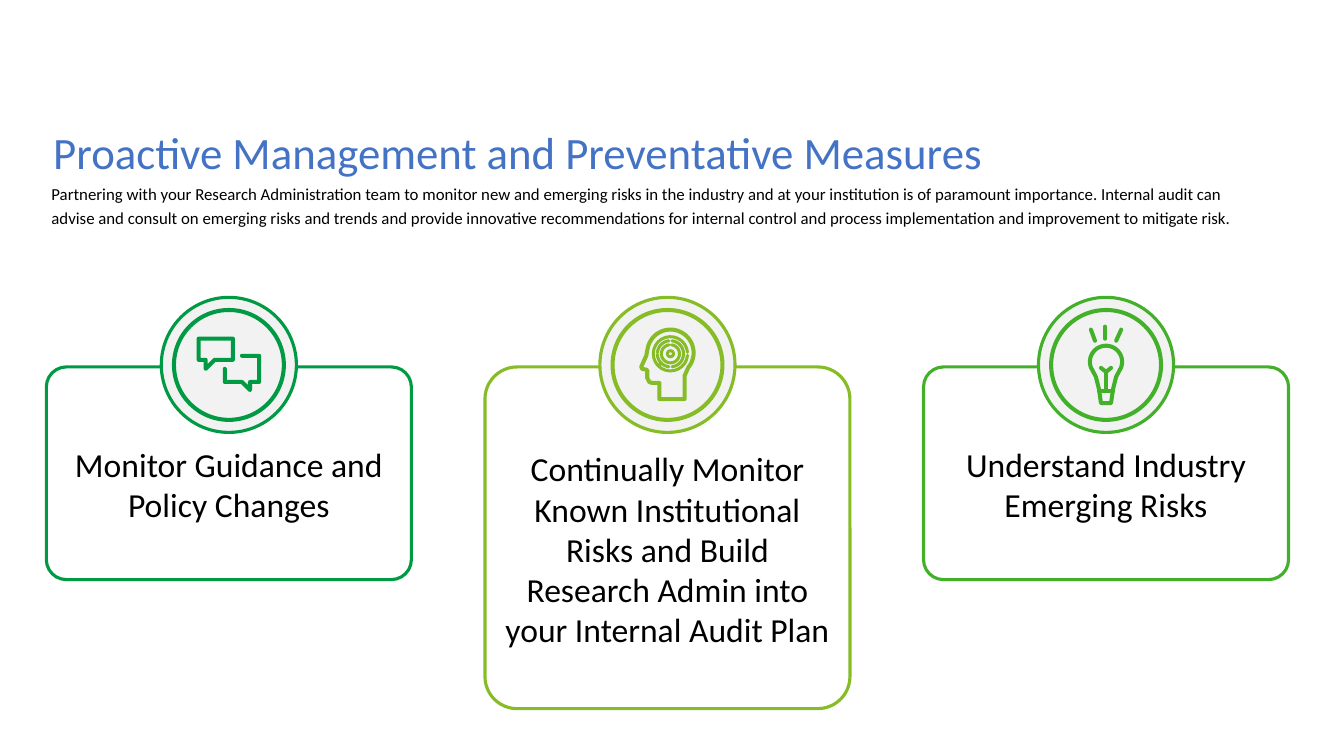
from dataclasses import dataclass
from math import cos, radians, sin

from pptx import Presentation
from pptx import util as u
from pptx.dml.color import RGBColor
from pptx.enum import shapes, text
from pptx.oxml.ns import qn

PX = 9144
HUES = {
    "blue": "4472C4", "black": "000000", "white": "FFFFFF", "gray": "F2F2F2",
    "dark": "009A44", "lime": "86BC25", "leaf": "43B02A",
}
Point = tuple[float, float]


@dataclass(frozen=True)
class Stroke:
    points: list[Point]
    closed: bool = False
    width: int = 4


@dataclass(frozen=True)
class Label:
    words: str
    box: tuple[int, int, int, int]
    size: int
    hue: str
    frame: dict
    para: dict


@dataclass(frozen=True)
class Card:
    words: str
    hue: str
    tall: int
    icon: list[Stroke]


def px(*vals: float) -> list[int]:
    return [u.Emu(round(val * PX)) for val in vals]


def color(hue: str) -> RGBColor:
    return RGBColor.from_string(HUES[hue])


def arc(x: int, y: int, r: int, start: int, end: int) -> list[Point]:
    steps = 24
    turns = [radians(start + (end - start) * i / steps) for i in range(steps + 1)]
    return [(x + r * cos(a), y + r * sin(a)) for a in turns]


def apply(item, looks: dict) -> None:
    for key, val in looks.items():
        setattr(item, key, val)


def ink(shape, hue: str, width: int) -> None:
    shape.shadow.inherit = False
    shape.line.color.rgb = color(hue)
    shape.line.width = width


def add_form(slide, kind, box: tuple, fill: str | None, hue: str, width: int):
    form = slide.shapes.add_shape(kind, *px(*box))
    ink(form, hue, width)
    if fill:
        form.fill.solid()
        form.fill.fore_color.rgb = color(fill)
    else:
        form.fill.background()
    return form


def add_stroke(slide, stroke: Stroke, hue: str) -> None:
    dots = [tuple(px(*dot)) for dot in stroke.points]
    build = slide.shapes.build_freeform(*dots[0], scale=1.0)
    build.add_line_segments(dots[1:], close=stroke.closed)
    form = build.convert_to_shape()
    form.fill.background()
    ink(form, hue, px(stroke.width)[0])
    form.element.spPr.find(qn("a:ln")).set("cap", "rnd")


def add_label(slide, label: Label) -> None:
    frame = slide.shapes.add_textbox(*px(*label.box)).text_frame
    apply(frame, {"word_wrap": True, **label.frame})
    para = frame.paragraphs[0]
    para.text = label.words
    apply(para, label.para)
    font = para.runs[0].font
    apply(font, {"name": "Calibri", "size": u.Pt(label.size)})
    font.color.rgb = color(label.hue)


def inset(side: int, top: int) -> dict:
    wide, high = px(side, top)
    return {"margin_left": wide, "margin_right": wide,
            "margin_top": high, "margin_bottom": high}


def add_card(slide, card: Card, left: int) -> None:
    line = u.Pt(2.25)
    mid = left + 181
    panel = add_form(slide, shapes.MSO_SHAPE.ROUNDED_RECTANGLE,
                     (left, 364, 362, card.tall), "white", card.hue, line)
    panel.adjustments[0] = 0.094
    look = {**inset(0, 0), "vertical_anchor": text.MSO_ANCHOR.MIDDLE}
    add_label(slide, Label(card.words, (left + 19, 440, 324, card.tall - 130), 24,
                           "black", look, {"alignment": text.PP_ALIGN.CENTER}))
    for span, fill, width in ((134, "gray", line), (109, None, px(4)[0])):
        box = (mid - span / 2, 362 - span / 2, span, span)
        add_form(slide, shapes.MSO_SHAPE.OVAL, box, fill, card.hue, width)
    for stroke in card.icon:
        add_stroke(slide, stroke, card.hue)


CHAT = [
    Stroke([(197, 336), (231, 336), (231, 357), (213, 357), (204, 366),
            (204, 357), (197, 357)], True),
    Stroke([(240, 353), (257, 353), (257, 379), (248, 379), (248, 387),
            (240, 379), (223, 379), (223, 366)]),
]
MAZE = ((17, 5, 355), (13, 97, 178), (13, 185, 263), (13, -83, 83),
        (9, -82, 262), (3, 0, 360))
HEAD = [
    Stroke([(654, 396), (679, 396), (679, 373), *arc(665, 350, 23, 40, -170),
            (641, 353), (636, 364), (637, 366), (642, 367), (642, 375),
            (644, 379), (647, 380), (654, 380)], True),
    *[Stroke(arc(665, 351, *ring), width=3) for ring in MAZE],
    Stroke([(653, 363), (656, 360)], width=3),
]
BULB = [
    Stroke([*arc(1097, 359, 16, 160, 380), (1107, 374), (1104, 386), (1102, 400),
            (1092, 400), (1090, 386), (1087, 374)], True),
    Stroke([(1090, 388), (1104, 388)]),
    Stroke([(1092, 365), (1097, 369), (1102, 365)]),
    Stroke([(1097, 369), (1097, 387)]),
    Stroke([(1096, 324), (1096, 336)]),
    Stroke([(1112, 327), (1107, 338)]),
    Stroke([(1082, 327), (1086, 338)]),
]
CARDS = [
    Card("Monitor Guidance and Policy Changes", "dark", 211, CHAT),
    Card("Continually Monitor Known Institutional Risks and Build Research Admin "
         "into your Internal Audit Plan", "lime", 339, HEAD),
    Card("Understand Industry Emerging Risks", "leaf", 211, BULB),
]
LABELS = [
    Label("Proactive Management and Preventative Measures", (43, 125, 1224, 49),
          32, "blue", inset(10, 5), {"line_spacing": 0.9}),
    Label("Partnering with your Research Administration team to monitor new and "
          "emerging risks in the industry and at your institution is of paramount "
          "importance. Internal audit can advise and consult on emerging risks and "
          "trends and provide innovative recommendations for internal control and "
          "process implementation and improvement to mitigate risk.",
          (44, 175, 1189, 76), 12, "black", inset(7, 3), {"line_spacing": 1.2}),
]


def main() -> None:
    deck = Presentation()
    apply(deck, dict(zip(("slide_width", "slide_height"), px(1333, 750))))
    slide = deck.slides.add_slide(deck.slide_layouts[6])
    for label in LABELS:
        add_label(slide, label)
    for i, card in enumerate(CARDS):
        add_card(slide, card, 46 + 435 * i)
    deck.save("out.pptx")


if __name__ == "__main__":
    main()
